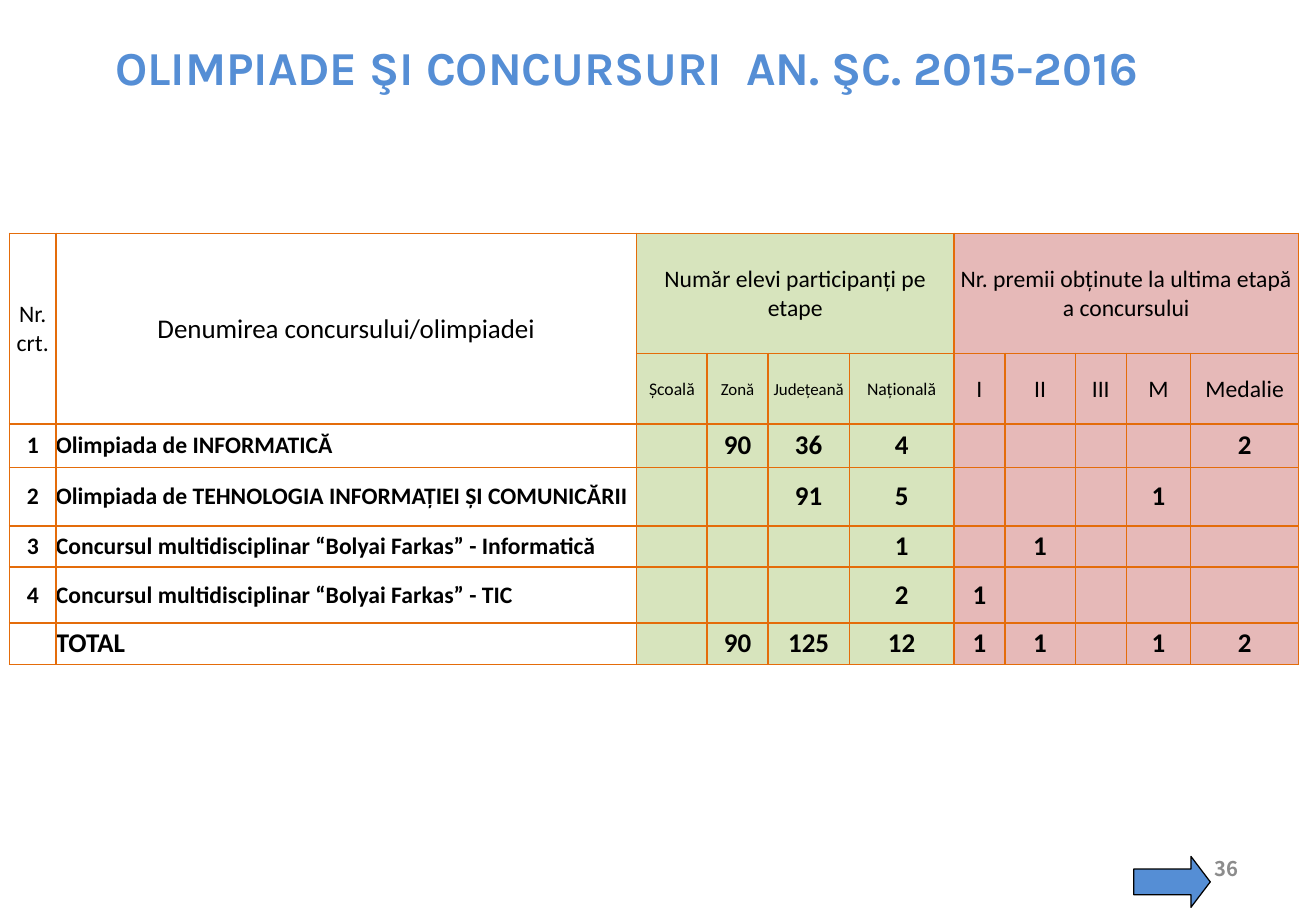
"""Builds the slide on school contests and olympiads, 2015-2016."""
from lxml.etree import SubElement
from pptx import Presentation
from pptx.dml.color import RGBColor
from pptx.enum.shapes import MSO_SHAPE as Shape
from pptx.enum.text import MSO_ANCHOR as Anchor, PP_ALIGN as Align
from pptx.oxml import parse_xml
from pptx.oxml.ns import nsdecls, qn
from pptx.util import Inches, Pt


def color(code):
    return RGBColor.from_string(code)


def style(frame, font, size, code, bold, align):
    frame.word_wrap = True
    frame.vertical_anchor = Anchor.MIDDLE
    for para in frame.paragraphs:
        para.alignment = align
        para.font.name = font
        para.font.size = Pt(size)
        para.font.bold = bold
        para.font.color.rgb = color(code)


BLUE, GREEN, PINK, ORANGE = "558ED5", "D7E4BD", "E6B9B8", "E46C0A"

deck = Presentation()
deck.slide_width, deck.slide_height = Inches(10.83), Inches(7.5)
slide = deck.slides.add_slide(deck.slide_layouts[5])

title = slide.shapes.title
title.left, title.top = Inches(0.26), Inches(0.17)
title.width, title.height = Inches(9.79), Inches(0.75)
title.text_frame.text = "OLIMPIADE ŞI CONCURSURI  AN. ŞC. 2015-2016"
style(title.text_frame, "Karla", 28, BLUE, True, Align.CENTER)

number = slide.shapes.add_textbox(Inches(7.76), Inches(6.95), Inches(2.53), Inches(0.4))
number.text_frame.text = "36"
style(number.text_frame, "Noto Sans CJK KR", 12, "8C8C8C", True, Align.RIGHT)

arrow = slide.shapes.add_shape(Shape.LEFT_ARROW, Inches(9.33), Inches(7.05), Inches(0.63), Inches(0.42))
arrow.rotation = 180
arrow.adjustments[1] = 0.38
arrow.shadow.inherit = False
arrow.fill.solid()
arrow.fill.fore_color.rgb = color(BLUE)
arrow.line.color.rgb = color("000000")
arrow.line.width = Pt(0.75)

widths = [0.38, 4.78, 0.58, 0.5, 0.67, 0.86, 0.42, 0.58, 0.42, 0.53, 0.89]
heights = [0.99, 0.58, 0.36, 0.48, 0.34, 0.46, 0.34]
rows = [
    ["Nr.\ncrt.", "Denumirea concursului/olimpiadei", "Număr elevi participanți pe etape", "", "", "",
     "Nr. premii obținute la ultima etapă a concursului", "", "", "", ""],
    ["", "", "Școală", "Zonă", "Județeană", "Națională", "I", "II", "III", "M", "Medalie"],
    ["1", "Olimpiada de INFORMATICĂ", "", "90", "36", "4", "", "", "", "", "2"],
    ["2", "Olimpiada de TEHNOLOGIA INFORMAȚIEI ȘI COMUNICĂRII", "", "", "91", "5", "", "", "", "1", ""],
    ["3", "Concursul multidisciplinar “Bolyai Farkas” - Informatică", "", "", "", "1", "", "1", "", "", ""],
    ["4", "Concursul multidisciplinar “Bolyai Farkas” - TIC", "", "", "", "2", "1", "", "", "", ""],
    ["", "TOTAL", "", "90", "125", "12", "1", "1", "", "1", "2"],
]
sizes = {"Denumirea concursului/olimpiadei": 16, "TOTAL": 16,
         "Școală": 10.5, "Zonă": 10, "Județeană": 10, "Națională": 10.5}

frame = slide.shapes.add_table(len(rows), len(widths), Inches(0.08), Inches(1.92),
                               Inches(sum(widths)), Inches(sum(heights)))
table = frame.table
table.first_row = table.horz_banding = False
for col, width in zip(table.columns, widths):
    col.width = Inches(width)
for row, height in zip(table.rows, heights):
    row.height = Inches(height)

for r, texts in enumerate(rows):
    for c, text in enumerate(texts):
        cell = table.cell(r, c)
        head = r < 2
        edge = Inches(0.01 if head else 0)
        cell.margin_left = cell.margin_right = cell.margin_top = edge
        cell.margin_bottom = 0
        cell.vertical_anchor = Anchor.MIDDLE
        props = cell._tc.get_or_add_tcPr()
        for side in ("lnL", "lnR", "lnT", "lnB"):
            line = parse_xml(f'<a:{side} {nsdecls("a")} w="{Pt(1)}"/>')
            fill = SubElement(line, qn("a:solidFill"))
            SubElement(fill, qn("a:srgbClr"), val=ORANGE)
            props.append(line)
        if c < 2:
            cell.fill.background()
        else:
            cell.fill.solid()
            cell.fill.fore_color.rgb = color(GREEN if c < 6 else PINK)
        if text:
            cell.text = text
            size = sizes.get(text, 14 if head or c < 2 else 16)
            align = Align.LEFT if c == 1 and not head else Align.CENTER
            style(cell.text_frame, "Calibri", size, "000000", not head, align)

for top, left, bottom, right in [(0, 0, 1, 0), (0, 1, 1, 1), (0, 2, 0, 5), (0, 6, 0, 10)]:
    table.cell(top, left).merge(table.cell(bottom, right))

deck.save("out.pptx")
